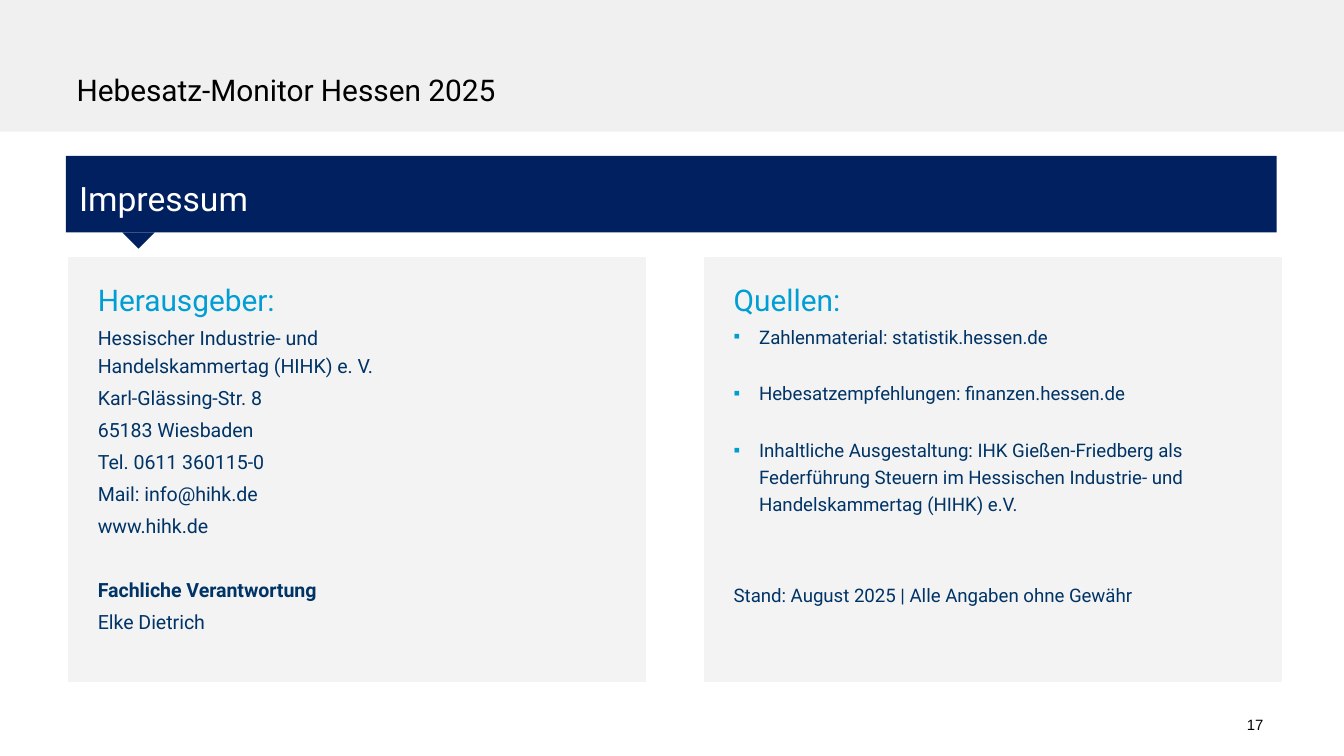
from copy import deepcopy

from lxml.etree import SubElement
from pptx import Presentation
from pptx.dml.color import RGBColor
from pptx.enum.shapes import MSO_SHAPE as SHAPE
from pptx.enum.text import MSO_ANCHOR as ANCHOR, PP_ALIGN as ALIGN
from pptx.oxml.ns import qn
from pptx.util import Inches, Pt

NAVY, BLUE, INK = "002060", "009ED4", "003366"
BULLET, PANEL, HEADER = "009DD1", "F3F3F3", "F0F0F0"
WHITE, BLACK = "FFFFFF", "000000"


def rgb(value):
    """Turn a hex string into a colour."""
    return RGBColor.from_string(value)


def add_box(s, shape, x, y, w, h, fill, line=None):
    """Add a plain filled shape, outlined only when a line colour is given."""
    sp = s.shapes.add_shape(shape, Inches(x), Inches(y), Inches(w), Inches(h))
    sp.shadow.inherit = False
    sp.fill.solid()
    sp.fill.fore_color.rgb = rgb(fill)
    if line:
        sp.line.color.rgb = rgb(line)
        sp.line.width = Pt(0.75)
    else:
        sp.line.fill.background()
    return sp


def write(p, text, size, color=INK, font="Roboto", bold=False, align=ALIGN.LEFT,
          before=0, spacing=None, margin=0, indent=0, bullet=None):
    """Fill one paragraph with formatted text; a vertical tab breaks the line."""
    p.text = text
    p.alignment = align
    p.space_before = Pt(before)
    if spacing:
        p.line_spacing = spacing
    pPr = p._p.get_or_add_pPr()
    pPr.set("marL", str(Inches(margin)))
    pPr.set("indent", str(Inches(indent)))
    if bullet:
        clr = SubElement(pPr, qn("a:buClr"))
        SubElement(clr, qn("a:srgbClr"), val=BULLET)
        SubElement(pPr, qn("a:buFont"), typeface="Arial")
        SubElement(pPr, qn("a:buChar"), char=bullet)
    for r in p.runs:
        r.font.size = Pt(size)
        r.font.name = font
        r.font.bold = bold
        r.font.color.rgb = rgb(color)
    for br in p._p.findall(qn("a:br")):
        br.append(deepcopy(p.runs[0]._r.rPr))


def add_header(s, x, y, w, h):
    """Place the grey band behind the slide title."""
    band = add_box(s, SHAPE.RECTANGLE, x, y, w, h, HEADER)
    s.shapes._spTree.insert(2, band._element)
    title = s.shapes.title
    title.left, title.top = Inches(x + 0.47), Inches(y + 0.35)
    title.width, title.height = Inches(7.66), Inches(0.64)
    title.text_frame.vertical_anchor = ANCHOR.MIDDLE
    write(title.text_frame.paragraphs[0], "Hebesatz-Monitor Hessen 2025", 16, BLACK)


def add_banner(s, x, y, w, h, text):
    """Place the section banner with its pointer underneath."""
    pointer = add_box(s, SHAPE.ISOSCELES_TRIANGLE, x + 0.42, y + h, 0.24, 0.12, NAVY)
    pointer.rotation = 180
    tf = add_box(s, SHAPE.RECTANGLE, x, y, w, h, NAVY).text_frame
    tf.word_wrap = True
    tf.vertical_anchor = ANCHOR.MIDDLE
    write(tf.paragraphs[0], text, 18, WHITE, spacing=1.2)


def add_panel(s, x, y, w, h, heading, size, items):
    """Place a panel with a heading and (text, format) paragraphs."""
    tf = add_box(s, SHAPE.RECTANGLE, x, y, w, h, PANEL, PANEL).text_frame
    tf.word_wrap = True
    tf.vertical_anchor = ANCHOR.TOP
    tf.margin_top = Inches(0.12)
    write(tf.paragraphs[0], heading, 16, BLUE, spacing=1.2, margin=0.12)
    for text, fmt in items:
        style = {"before": 0.2 * size, "spacing": 1.2, "margin": 0.12} | fmt
        write(tf.add_paragraph(), text, size, **style)


def add_page_number(s, x, y, w, h, number):
    """Place the page number at the bottom right."""
    tf = s.shapes.add_textbox(Inches(x), Inches(y), Inches(w), Inches(h)).text_frame
    tf.word_wrap = True
    tf.vertical_anchor = ANCHOR.BOTTOM
    write(tf.paragraphs[0], number, 8, BLACK, font="Arial", align=ALIGN.RIGHT)


def main():
    """Build the imprint slide."""
    prs = Presentation()
    prs.slide_width = Inches(10)
    prs.slide_height = prs.slide_width * 9 // 16
    s = prs.slides.add_slide(prs.slide_layouts[5])
    add_header(s, 0, 0, 10, 0.98)
    add_banner(s, 0.49, 1.16, 9.01, 0.57, "Impressum")

    publisher = [
        ("Hessischer Industrie- und \vHandelskammertag (HIHK) e. V.", {}),
        ("Karl-Glässing-Str. 8", {}),
        ("65183 Wiesbaden", {}),
        ("Tel. 0611 360115-0", {}),
        ("Mail: info@hihk.de", {}),
        ("www.hihk.de", {}),
        ("Fachliche Verantwortung", {"bold": True, "before": 19}),
        ("Elke Dietrich", {}),
    ]
    point = {"margin": 0.31, "indent": -0.19, "bullet": "▪"}
    spaced = point | {"before": 16}
    sources = [
        ("Zahlenmaterial: statistik.hessen.de", point),
        ("Hebesatzempfehlungen: finanzen.hessen.de", spaced),
        ("Inhaltliche Ausgestaltung: IHK Gießen-Friedberg als Federführung Steuern "
         "im Hessischen Industrie- und Handelskammertag (HIHK) e.V.", spaced),
        ("Stand: August 2025 | Alle Angaben ohne Gewähr", {"before": 34.5}),
    ]
    add_panel(s, 0.51, 1.92, 4.29, 3.15, "Herausgeber:", 10.5, publisher)
    add_panel(s, 5.24, 1.92, 4.29, 3.15, "Quellen:", 10, sources)
    add_page_number(s, 7.17, 5.21, 2.33, 0.3, "17")
    prs.save("out.pptx")


if __name__ == "__main__":
    main()
